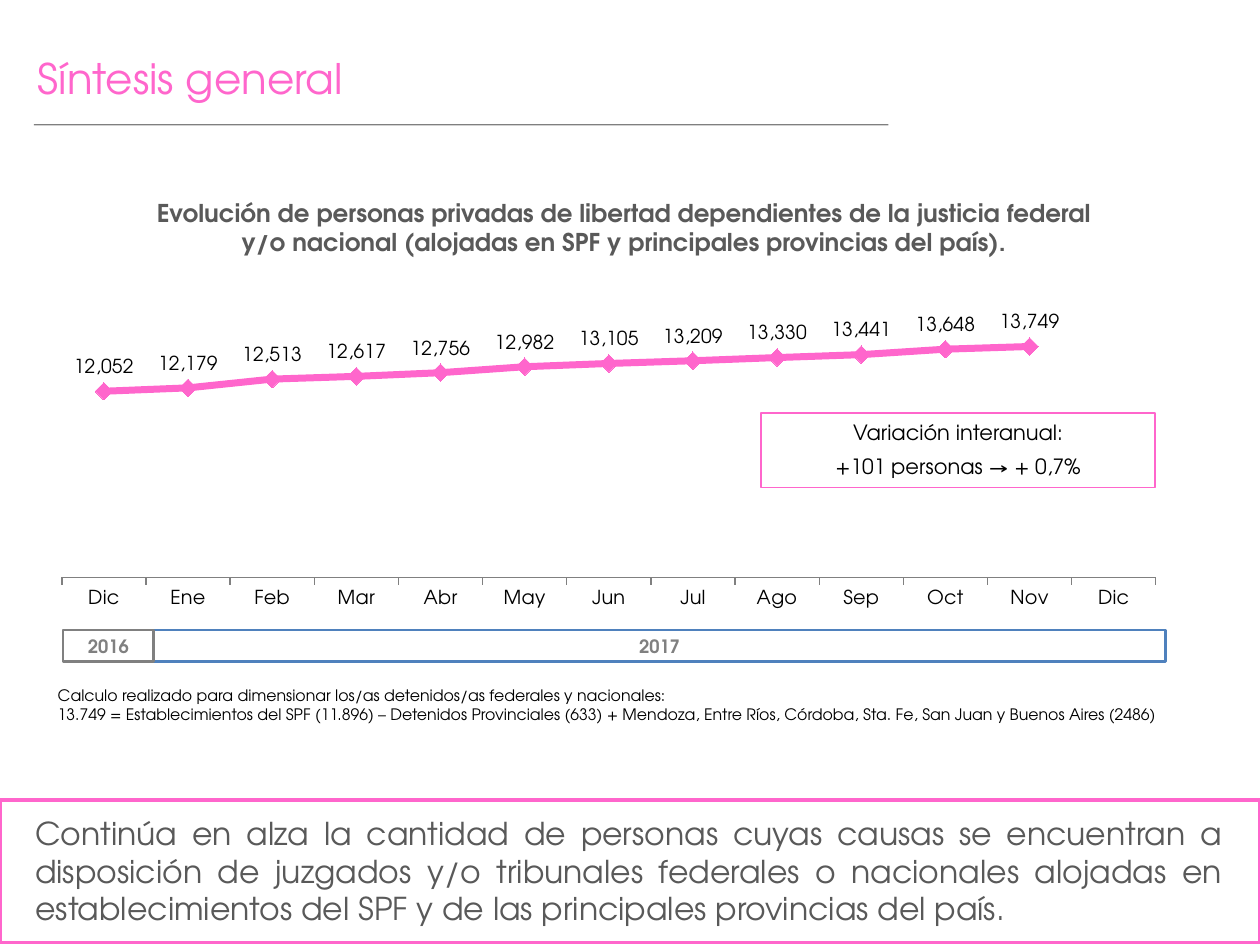
from lxml.etree import SubElement
from pptx import Presentation
from pptx.chart.data import CategoryChartData
from pptx.dml.color import RGBColor
from pptx.enum.chart import XL_CHART_TYPE, XL_LABEL_POSITION, XL_MARKER_STYLE, XL_TICK_MARK
from pptx.enum.shapes import MSO_CONNECTOR, MSO_SHAPE
from pptx.enum.text import MSO_ANCHOR, PP_ALIGN
from pptx.oxml import parse_xml
from pptx.oxml.ns import nsdecls, qn
from pptx.util import Inches, Pt

FONT = "TeX Gyre Adventor"
COLORS = {
    "pink": "FF66CC",
    "blue": "4F81BD",
    "gray": "808080",
    "text": "595959",
    "black": "000000",
    "white": "FFFFFF",
}
MONTHS = ["Dic", "Ene", "Feb", "Mar", "Abr", "May", "Jun",
          "Jul", "Ago", "Sep", "Oct", "Nov", "Dic"]
DETAINEES = [12052, 12179, 12513, 12617, 12756, 12982, 13105,
             13209, 13330, 13441, 13648, 13749, None]
PLOT_AREA = {"x": 0.01, "y": 0.2, "w": 0.95, "h": 0.63}


def color(name):
    return RGBColor.from_string(COLORS[name])


def place(item, left, top, width, height):
    item.left, item.top = Inches(left), Inches(top)
    item.width, item.height = Inches(width), Inches(height)


class Report:
    def __init__(self, slide):
        self.slide = slide

    def add_lines(self, frame, lines, size, tone, bold=False, align=PP_ALIGN.LEFT,
                  gap=0, anchor=MSO_ANCHOR.TOP):
        frame.word_wrap = True
        frame.vertical_anchor = anchor
        for index, line in enumerate(lines):
            paragraph = frame.paragraphs[0] if index == 0 else frame.add_paragraph()
            paragraph.alignment = align
            if index:
                paragraph.space_before = Pt(gap)
            run = paragraph.add_run()
            run.text = line
            run.font.name, run.font.size, run.font.bold = FONT, Pt(size), bold
            run.font.color.rgb = color(tone)

    def title(self, line, box):
        heading = self.slide.shapes.title
        place(heading, *box)
        self.add_lines(heading.text_frame, [line], 24, "pink")

    def text(self, lines, box, size, tone, **style):
        note = self.slide.shapes.add_textbox(*map(Inches, box))
        self.add_lines(note.text_frame, lines, size, tone, **style)

    def box(self, box, outline, weight, fill=None):
        """Add an outlined rectangle and return its text frame."""
        frame = self.slide.shapes.add_shape(MSO_SHAPE.RECTANGLE, *map(Inches, box))
        frame.shadow.inherit = False
        if fill:
            frame.fill.solid()
            frame.fill.fore_color.rgb = color(fill)
        else:
            frame.fill.background()
        frame.line.color.rgb = color(outline)
        frame.line.width = Pt(weight)
        return frame.text_frame

    def year(self, label, left, width, outline):
        frame = self.box((left, 5, width, 0.25), outline, 1.5)
        frame.margin_top = frame.margin_bottom = 0
        self.add_lines(frame, [label], 10.5, "gray", bold=True,
                       align=PP_ALIGN.CENTER, anchor=MSO_ANCHOR.MIDDLE)

    def rule(self, left, right, y):
        """Add a half-transparent horizontal line."""
        line = self.slide.shapes.add_connector(
            MSO_CONNECTOR.STRAIGHT, Inches(left), Inches(y), Inches(right), Inches(y))
        line.line.color.rgb = color("black")
        line.line.width = Pt(0.75)
        properties = line.element.spPr
        tone = properties.find(".//" + qn("a:srgbClr"))
        SubElement(tone, qn("a:alpha"), val="50000")
        SubElement(properties, qn("a:effectLst"))

    def line_chart(self, box):
        data = CategoryChartData(number_format="#,##0")
        data.categories = MONTHS
        data.add_series("Personas", DETAINEES)
        chart = self.slide.shapes.add_chart(
            XL_CHART_TYPE.LINE_MARKERS, *map(Inches, box), data).chart
        chart.has_legend = chart.has_title = False
        chart.font.name, chart.font.size = FONT, Pt(11)
        chart.font.color.rgb = color("black")

        values = chart.value_axis
        values.minimum_scale, values.maximum_scale = 5000, 14000
        values.has_major_gridlines = False
        values.visible = False
        months = chart.category_axis
        months.major_tick_mark = XL_TICK_MARK.OUTSIDE
        months.format.line.color.rgb = color("gray")
        months.tick_labels.font.size = Pt(11)

        plot = chart.plots[0]
        plot.vary_by_categories = False
        series = plot.series[0]
        series.smooth = False
        series.format.line.color.rgb = color("pink")
        series.format.line.width = Pt(4)
        marker = series.marker
        marker.style, marker.size = XL_MARKER_STYLE.DIAMOND, 10
        marker.format.fill.solid()
        marker.format.fill.fore_color.rgb = color("pink")
        marker.format.line.color.rgb = color("pink")
        labels = series.data_labels
        labels.show_value = True
        labels.position = XL_LABEL_POSITION.ABOVE
        labels.number_format, labels.number_format_is_linked = "#,##0", False
        self.fix_plot_area(chart)

    def fix_plot_area(self, chart):
        modes = "".join(f'<c:{side}Mode val="edge"/>' for side in "xy")
        sizes = "".join(f'<c:{side} val="{part}"/>' for side, part in PLOT_AREA.items())
        layout = parse_xml(
            f'<c:layout {nsdecls("c")}><c:manualLayout><c:layoutTarget val="inner"/>'
            f'{modes}{sizes}</c:manualLayout></c:layout>')
        area = chart.element.find(".//" + qn("c:plotArea"))
        for previous in area.findall(qn("c:layout")):
            area.remove(previous)
        area.insert(0, layout)


def main():
    presentation = Presentation()
    presentation.slide_width, presentation.slide_height = Inches(10), Inches(7.5)
    title_only = presentation.slide_layouts[5]
    report = Report(presentation.slides.add_slide(title_only))

    report.rule(0.27, 7.05, 0.99)
    report.title("Síntesis general", (0.2, 0.37, 7.4, 0.62))
    report.line_chart((0.4, 2.1, 9.14, 2.99))
    report.text(
        ["Evolución de personas privadas de libertad dependientes de la justicia federal "
         "y/o nacional (alojadas en SPF y principales provincias del país)."],
        (0.98, 1.52, 7.95, 0.57), 14, "text", bold=True, align=PP_ALIGN.CENTER)
    report.text(
        ["Calculo realizado para dimensionar los/as detenidos/as federales y nacionales:",
         "13.749 = Establecimientos del SPF (11.896) – Detenidos Provinciales (633) + "
         "Mendoza, Entre Ríos, Córdoba, Sta. Fe, San Juan y Buenos Aires (2486)"],
        (0.36, 5.39, 9.05, 0.4), 9, "black")
    report.text(
        ["Continúa en alza la cantidad de personas cuyas causas se encuentran a "
         "disposición de juzgados y/o tribunales federales o nacionales alojadas en "
         "establecimientos del SPF y de las principales provincias del país."],
        (0.18, 6.41, 9.62, 1.01), 18, "text", align=PP_ALIGN.JUSTIFY)
    report.box((0, 6.35, 10, 1.13), "pink", 2)
    report.year("2017", 1.22, 8.03, "blue")
    report.year("2016", 0.5, 0.72, "gray")
    variation = report.box((6.04, 3.28, 3.13, 0.59), "pink", 1, fill="white")
    report.add_lines(variation, ["Variación interanual:", "+101 personas → + 0,7%"],
                     12, "black", align=PP_ALIGN.CENTER, gap=5)

    presentation.save("out.pptx")


if __name__ == "__main__":
    main()
